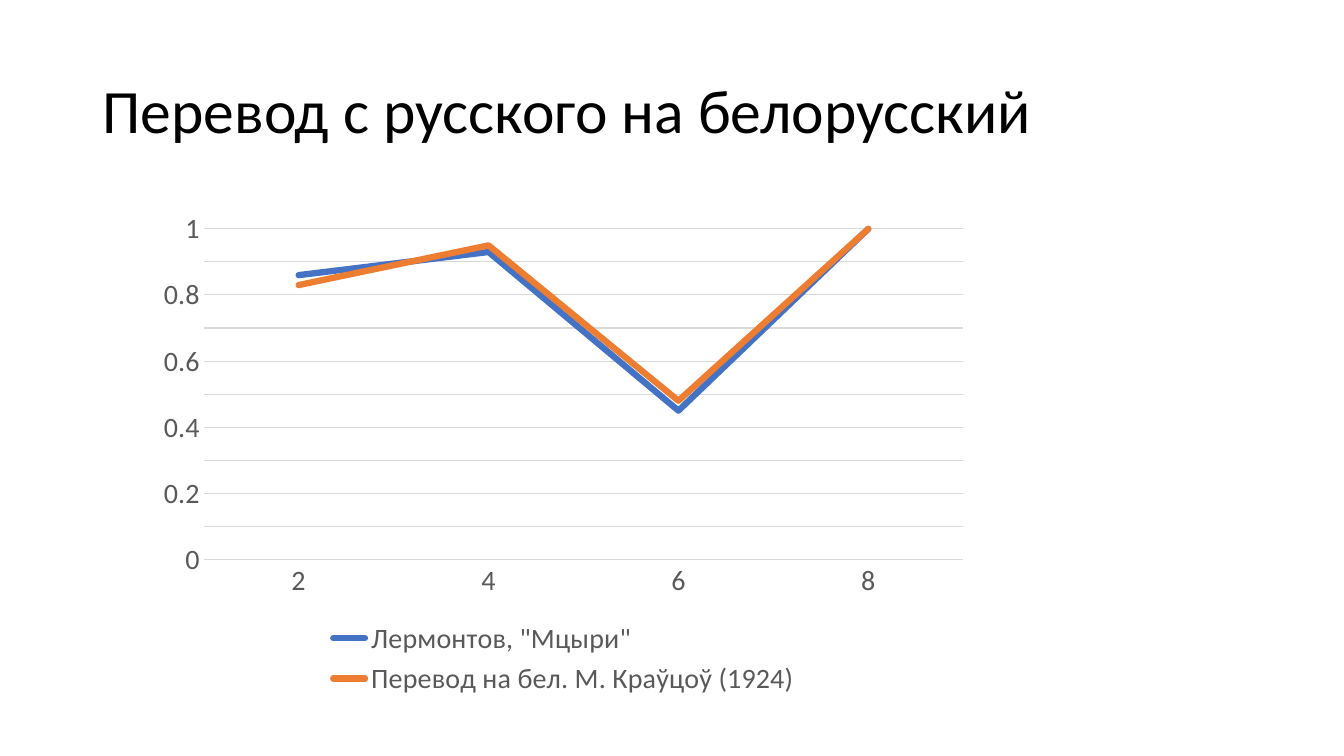
from dataclasses import dataclass

from pptx import Presentation
from pptx.chart.data import CategoryChartData
from pptx.dml.color import RGBColor
from pptx.enum.chart import XL_CHART_TYPE as ChartType
from pptx.enum.chart import XL_LEGEND_POSITION as LegendPosition
from pptx.enum.chart import XL_MARKER_STYLE as Marker
from pptx.enum.chart import XL_TICK_MARK as Tick
from pptx.enum.text import MSO_ANCHOR as Anchor
from pptx.util import Inches, Pt

FONT = "Calibri"
GRID, LABEL = "D9D9D9", "595959"


@dataclass(frozen=True)
class Verse:
    name: str
    values: tuple[float, ...]
    color: str


SYLLABLES = ("2", "4", "6", "8")
VERSES = (
    Verse('Лермонтов, "Мцыри"', (0.86, 0.93, 0.45, 1), "4472C4"),
    Verse("Перевод на бел. М. Краўцоў (1924)", (0.83, 0.95, 0.48, 1), "ED7D31"),
)


def rgb(color: str) -> RGBColor:
    return RGBColor.from_string(color)


def set_font(font, size: float, color: str) -> None:
    font.name, font.size = FONT, Pt(size)
    font.color.rgb = rgb(color)


def set_line(line, width: float, color: str) -> None:
    line.width = Pt(width)
    line.color.rgb = rgb(color)


def set_all(target, values: dict) -> None:
    for name, value in values.items():
        setattr(target, name, value)


def add_title(slide, text: str) -> None:
    title = slide.shapes.add_textbox(Inches(0.92), Inches(0.4), Inches(11.5), Inches(1.45))
    frame = title.text_frame
    set_all(frame, {"word_wrap": True, "vertical_anchor": Anchor.MIDDLE})
    heading = frame.paragraphs[0]
    heading.line_spacing = 0.9
    run = heading.add_run()
    run.text = text
    set_font(run.font, 44, "000000")


def add_rhythm_chart(slide) -> None:
    data = CategoryChartData()
    data.categories = SYLLABLES
    for verse in VERSES:
        data.add_series(verse.name, verse.values)
    chart = slide.shapes.add_chart(
        ChartType.LINE, Inches(1.46), Inches(2), Inches(8.26), Inches(4.96), data
    ).chart
    set_all(chart, {"has_title": False, "has_legend": True})
    set_font(chart.font, 20, LABEL)

    # Legend
    set_all(chart.legend, {"position": LegendPosition.BOTTOM, "include_in_layout": False})
    set_font(chart.legend.font, 20, LABEL)

    # Axes
    syllable_axis, share_axis = chart.category_axis, chart.value_axis
    for axis in (syllable_axis, share_axis):
        set_all(axis, {"major_tick_mark": Tick.NONE, "minor_tick_mark": Tick.NONE})
        set_font(axis.tick_labels.font, 20, LABEL)
    set_line(syllable_axis.format.line, 0.75, GRID)
    set_all(share_axis, {"minimum_scale": 0, "maximum_scale": 1,
                         "major_unit": 0.1, "has_major_gridlines": True})
    share_axis.format.line.fill.background()
    set_line(share_axis.major_gridlines.format.line, 0.75, GRID)

    # Lines
    plot = chart.plots[0]
    plot.vary_by_categories = False
    for series, verse in zip(plot.series, VERSES):
        series.smooth = False
        series.marker.style = Marker.NONE
        set_line(series.format.line, 4.5, verse.color)
        series.format.line._get_or_add_ln().set("cap", "rnd")


def main() -> None:
    deck = Presentation()
    set_all(deck, {"slide_width": Inches(13.33), "slide_height": Inches(7.5)})
    slide = deck.slides.add_slide(deck.slide_layouts[6])
    add_title(slide, "Перевод с русского на белорусский")
    add_rhythm_chart(slide)
    deck.save("out.pptx")


if __name__ == "__main__":
    main()
